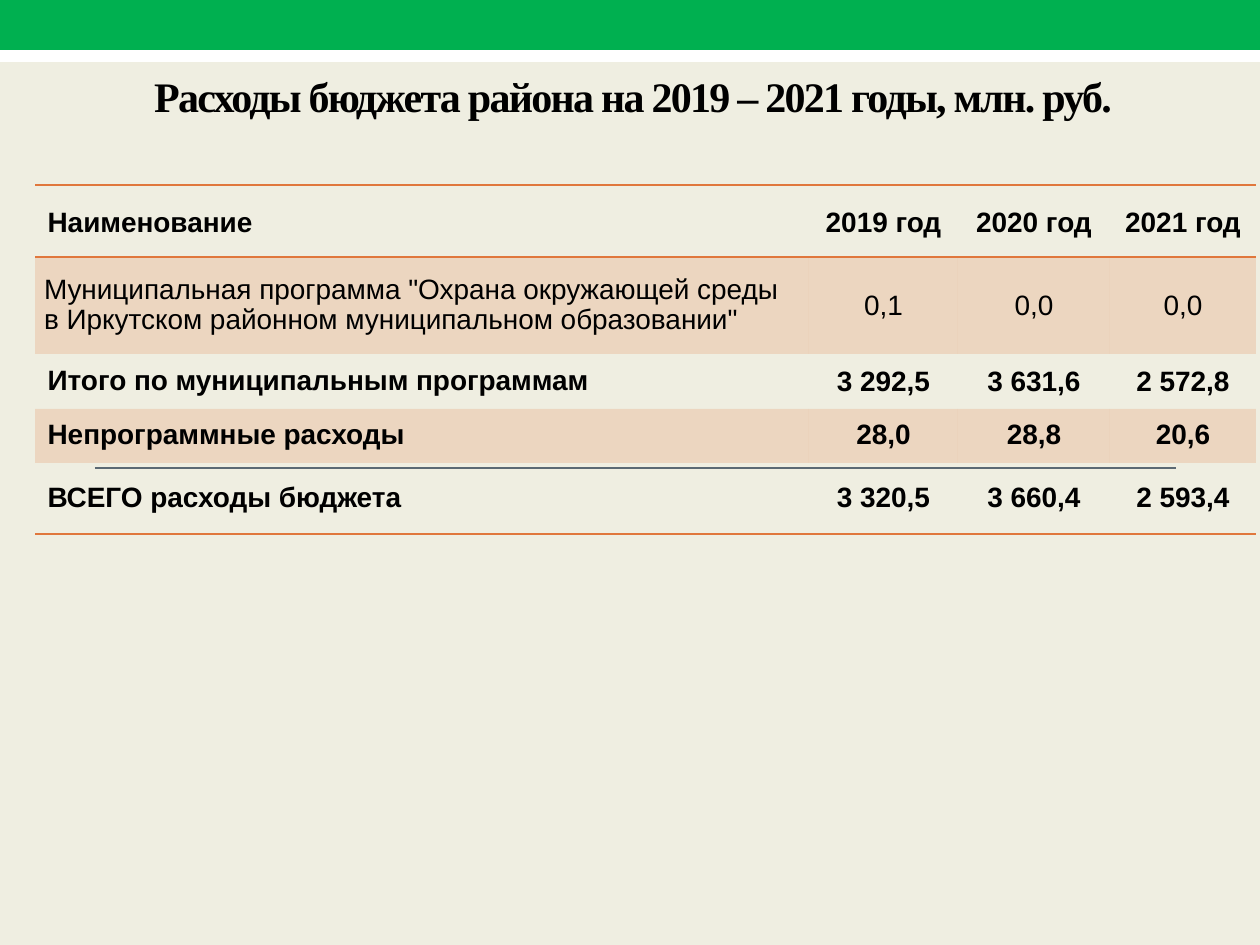
from lxml import etree
from pptx import Presentation
from pptx.dml.color import RGBColor
from pptx.enum.shapes import MSO_CONNECTOR, MSO_SHAPE
from pptx.enum.text import MSO_ANCHOR, PP_ALIGN
from pptx.oxml.ns import qn
from pptx.util import Pt

SCALE = 914400 / 126
RECT = MSO_SHAPE.RECTANGLE
LINE = MSO_CONNECTOR.STRAIGHT
LEFT, CENTER = PP_ALIGN.LEFT, PP_ALIGN.CENTER
MIDDLE, BOTTOM = MSO_ANCHOR.MIDDLE, MSO_ANCHOR.BOTTOM
PLAIN = "{2D5ABB26-0587-4C30-8999-92F81FD0307C}"
ORANGE = "E0773C"

COLS = [774, 149, 152, 146]
ROWS = [
    (72, ["Наименование", "2019 год", "2020 год", "2021 год"]),
    (97, ['Муниципальная программа "Охрана окружающей среды '
          'в Иркутском районном муниципальном образовании"',
          "0,1", "0,0", "0,0"]),
    (55, ["Итого по муниципальным программам",
          "3 292,5", "3 631,6", "2 572,8"]),
    (54, ["Непрограммные расходы", "28,0", "28,8", "20,6"]),
    (71, ["ВСЕГО расходы бюджета", "3 320,5", "3 660,4", "2 593,4"]),
]
HEAD, ECO, SUM, OTHER, TOTAL = range(5)
EDGES = {HEAD: ["a:lnT", "a:lnB"], TOTAL: ["a:lnB"]}


def px(n):
    return round(n * SCALE)


def color(code):
    return RGBColor.from_string(code)


def style(item, **values):
    for name, value in values.items():
        setattr(item, name, value)


def write(para, text, font, size, bold=True, **values):
    style(para, **values)
    run = para.add_run()
    run.text = text
    style(run.font, name=font, size=Pt(size), bold=bold)
    run.font.color.rgb = color("000000")
    return run


def band(slide, top, high, code):
    shape = slide.shapes.add_shape(RECT, 0, px(top), px(1260), px(high))
    shape.shadow.inherit = False
    shape.fill.solid()
    shape.fill.fore_color.rgb = color(code)
    shape.line.fill.background()


def rule(slide, left, right, top):
    line = slide.shapes.add_connector(
        LINE, px(left), px(top), px(right), px(top))
    line.line.color.rgb = color("5B6973")
    line.line.width = Pt(1.5)
    etree.SubElement(line.element.spPr, qn("a:effectLst"))


def title(slide, text):
    box = slide.shapes.add_textbox(px(35), px(62), px(1196), px(65))
    frame = box.text_frame
    style(frame, word_wrap=True, vertical_anchor=BOTTOM)
    run = write(frame.paragraphs[0], text, "Times New Roman", 24,
                alignment=CENTER)
    run.font.element.set("spc", "-100") if hasattr(run.font, "element") \
        else run._r.get_or_add_rPr().set("spc", "-100")


def border(cell, tag):
    props = cell._tc.get_or_add_tcPr()
    edge = etree.SubElement(props, qn(tag), w=str(Pt(1)))
    fill = etree.SubElement(edge, qn("a:solidFill"))
    etree.SubElement(fill, qn("a:srgbClr"), val=ORANGE)


def shade(cell, tint):
    if not tint:
        cell.fill.background()
        return
    cell.fill.solid()
    cell.fill.fore_color.rgb = color(ORANGE)
    for node in cell._tc.iter(qn("a:solidFill")):
        if node.getparent().tag == qn("a:tcPr"):
            etree.SubElement(node[0], qn("a:alpha"), val="20000")


def spacing(row, col):
    if row == HEAD:
        return 1.15
    if col and row in (ECO, SUM):
        return None
    return 0.95


def fill_cell(cell, row, col, text):
    cell.vertical_anchor = MIDDLE
    if (row == ECO and not col) or (row > ECO and col):
        style(cell, margin_left=px(9), margin_right=px(9),
              margin_top=0, margin_bottom=0)
    write(cell.text_frame.paragraphs[0], text, "Arial", 16, row != ECO,
          alignment=CENTER if col else LEFT,
          line_spacing=spacing(row, col))
    for tag in EDGES.get(row, []):
        border(cell, tag)
    shade(cell, row in (ECO, OTHER))


def budget(slide):
    high = sum(size for size, _ in ROWS)
    frame = slide.shapes.add_table(
        len(ROWS), len(COLS), px(35), px(185), px(sum(COLS)), px(high))
    table = frame.table
    style(table, first_row=False, horz_banding=False)
    for node in frame.element.iter(qn("a:tableStyleId")):
        node.text = PLAIN
    for col, wide in enumerate(COLS):
        table.columns[col].width = px(wide)
    for row, (size, texts) in enumerate(ROWS):
        table.rows[row].height = px(size)
        for col, text in enumerate(texts):
            fill_cell(table.cell(row, col), row, col, text)


def main():
    deck = Presentation()
    style(deck, slide_width=px(1260), slide_height=px(945))
    slide = deck.slides.add_slide(deck.slide_layouts[6])
    slide.background.fill.solid()
    slide.background.fill.fore_color.rgb = color("EFEEE1")
    band(slide, 30, 32, "FFFFFF")
    band(slide, 0, 50, "00B050")
    rule(slide, 95, 1176, 468)
    title(slide, "Расходы бюджета района на 2019 – 2021 годы, млн. руб.")
    budget(slide)
    deck.save("out.pptx")


if __name__ == "__main__":
    main()
